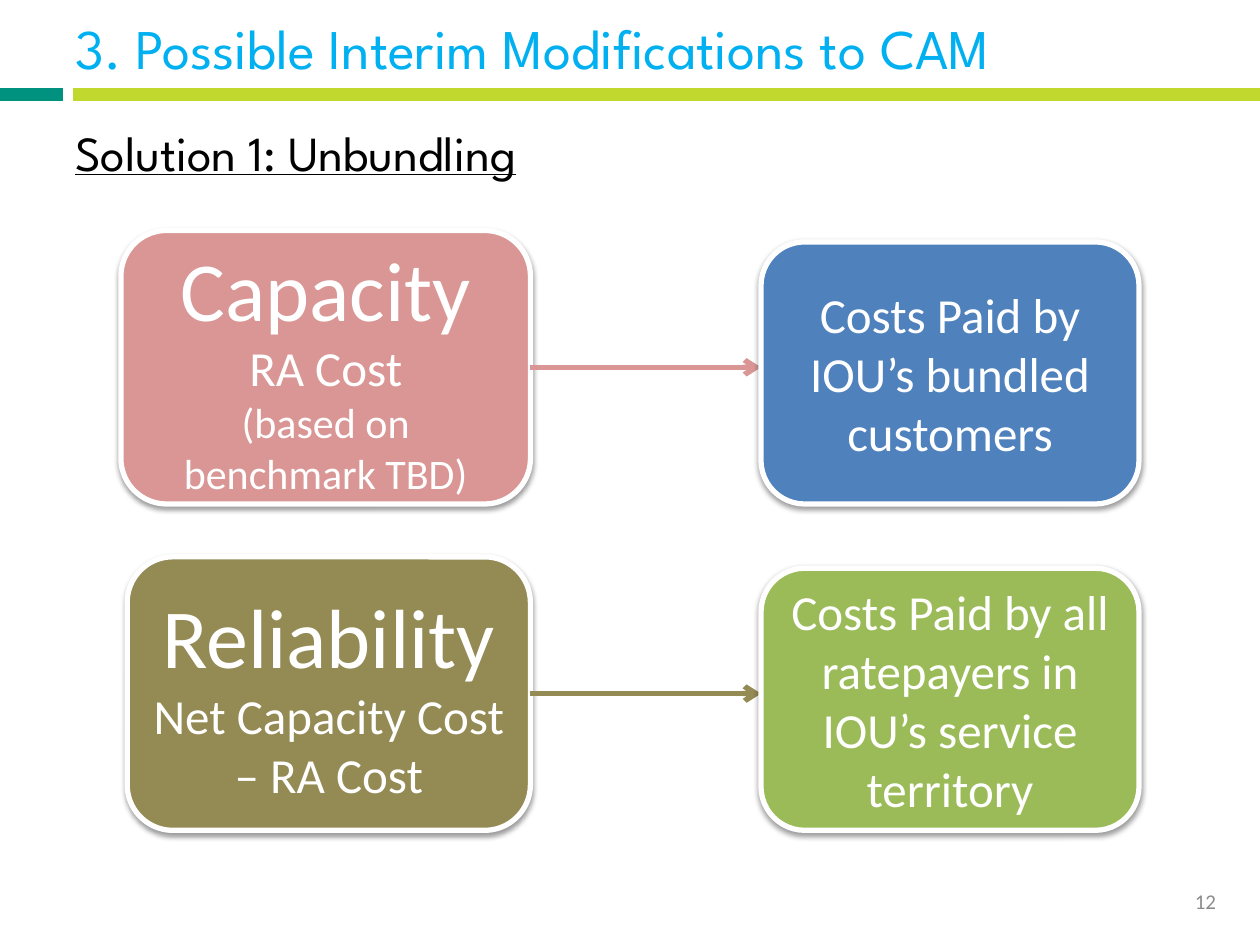
"""Build the slide on unbundling capacity and reliability costs."""
from lxml.etree import SubElement
from pptx import Presentation
from pptx.dml.color import RGBColor
from pptx.enum.shapes import MSO_CONNECTOR, MSO_SHAPE
from pptx.enum.text import MSO_ANCHOR, PP_ALIGN
from pptx.oxml import parse_xml
from pptx.oxml.ns import qn
from pptx.util import Inches, Pt

WHITE = RGBColor(0xFF, 0xFF, 0xFF)
BLACK = RGBColor(0, 0, 0)
GRAY = RGBColor(0x8C, 0x8C, 0x8C)
SKY = RGBColor(0x00, 0xB0, 0xF0)
TEAL = RGBColor(0x00, 0x92, 0x7E)
LIME = RGBColor(0xC1, 0xD8, 0x2F)
ROSE = RGBColor(0xD9, 0x96, 0x94)
OLIVE = RGBColor(0x94, 0x8A, 0x54)
BLUE = RGBColor(0x4F, 0x81, 0xBD)
GREEN = RGBColor(0x9B, 0xBB, 0x59)

TITLE = "3. Possible Interim Modifications to CAM"
HEAD = "Solution 1: Unbundling"
PAGE = "12"
RULES = [(0, 0.5, TEAL), (0.58, 10, LIME)]
FLOWS = [
    {"left": 0.96, "from": ROSE, "to": BLUE,
     "cause": [("Capacity", 48), ("RA Cost", 28), ("(based on benchmark TBD)", 24)],
     "payer": [("Costs Paid by IOU’s bundled customers", 28)]},
    {"left": 1.01, "from": OLIVE, "to": GREEN,
     "cause": [("Reliability", 48), ("Net Capacity Cost", 28), ("– RA Cost", 28)],
     "payer": [("Costs Paid by all ratepayers in IOU’s service territory", 28)]},
]
TOP, STEP = 1.83, 2.59
EDGE, NEXT = 4.21, 6.04
TALL, LOW, WIDE = 2.17, 2.08, 3

LEAD = {"name": "League Spartan", "color": SKY}
SUB = {"name": "League Spartan", "color": BLACK, "underline": True}
BODY = {"name": "Calibri", "color": WHITE}
FOOT = {"name": "Calibri", "color": GRAY}
SHADE = (
    '<a:effectLst xmlns:a="http://schemas.openxmlformats.org/drawingml/2006/main">'
    '<a:outerShdw blurRad="39370" dist="20320" dir="5400000" rotWithShape="0">'
    '<a:srgbClr val="000000"><a:alpha val="38000"/></a:srgbClr>'
    '</a:outerShdw></a:effectLst>'
)


def write(shape, lines, look, align, anchor=MSO_ANCHOR.MIDDLE):
    frame = shape.text_frame
    frame.word_wrap = True
    frame.vertical_anchor = anchor
    frame.text = "\n".join(text for text, _ in lines)
    for para, (_, size) in zip(frame.paragraphs, lines):
        para.alignment = align
        font = para.runs[0].font
        font.size = Pt(size)
        for key, value in look.items():
            if key == "color":
                font.color.rgb = value
            else:
                setattr(font, key, value)


def place(shape, *box):
    for key, value in zip(("left", "top", "width", "height"), box):
        setattr(shape, key, Inches(value))


def card(slide, box, fill, lines):
    shape = slide.shapes.add_shape(MSO_SHAPE.ROUNDED_RECTANGLE, *map(Inches, box))
    shape.fill.solid()
    shape.fill.fore_color.rgb = fill
    shape.line.color.rgb = WHITE
    shape.line.width = Pt(3)
    shape._element.spPr.append(parse_xml(SHADE))
    write(shape, lines, BODY, PP_ALIGN.CENTER)
    return shape


def rule(slide, start, end, y, color, width):
    line = slide.shapes.add_connector(
        MSO_CONNECTOR.STRAIGHT, *map(Inches, (start, y, end, y)))
    line.line.color.rgb = color
    line.line.width = Pt(width)
    SubElement(line._element.spPr, qn("a:effectLst"))
    return line


def main():
    deck = Presentation()
    deck.slide_width, deck.slide_height = Inches(10), Inches(7.5)
    slide = deck.slides.add_slide(deck.slide_layouts[5])

    for start, end, color in RULES:
        rule(slide, start, end, 0.75, color, 8)

    title = slide.shapes.title
    place(title, 0.5, -0.25, 9.33, 1.25)
    write(title, [(TITLE, 32)], LEAD, PP_ALIGN.LEFT)

    head = slide.shapes.add_textbox(*map(Inches, (0.5, 0.92, 9, 0.6)))
    write(head, [(HEAD, 28)], SUB, PP_ALIGN.LEFT, MSO_ANCHOR.TOP)
    head.text_frame.paragraphs[0].space_before = Pt(5.6)

    page = slide.shapes.add_textbox(*map(Inches, (7.42, 6.95, 2.33, 0.4)))
    write(page, [(PAGE, 12)], FOOT, PP_ALIGN.RIGHT)

    for row, flow in enumerate(FLOWS):
        top, left = TOP + row * STEP, flow["left"]
        cause = card(slide, (left, top, EDGE - left, TALL), flow["from"], flow["cause"])
        arrow = rule(slide, EDGE, NEXT, top + TALL / 2, flow["from"], 3)
        arrow.begin_connect(cause, 3)
        SubElement(arrow.line._get_or_add_ln(), qn("a:tailEnd"), type="arrow")
        card(slide, (NEXT, top + TALL - LOW, WIDE, LOW), flow["to"], flow["payer"])

    deck.save("out.pptx")


if __name__ == "__main__":
    main()
